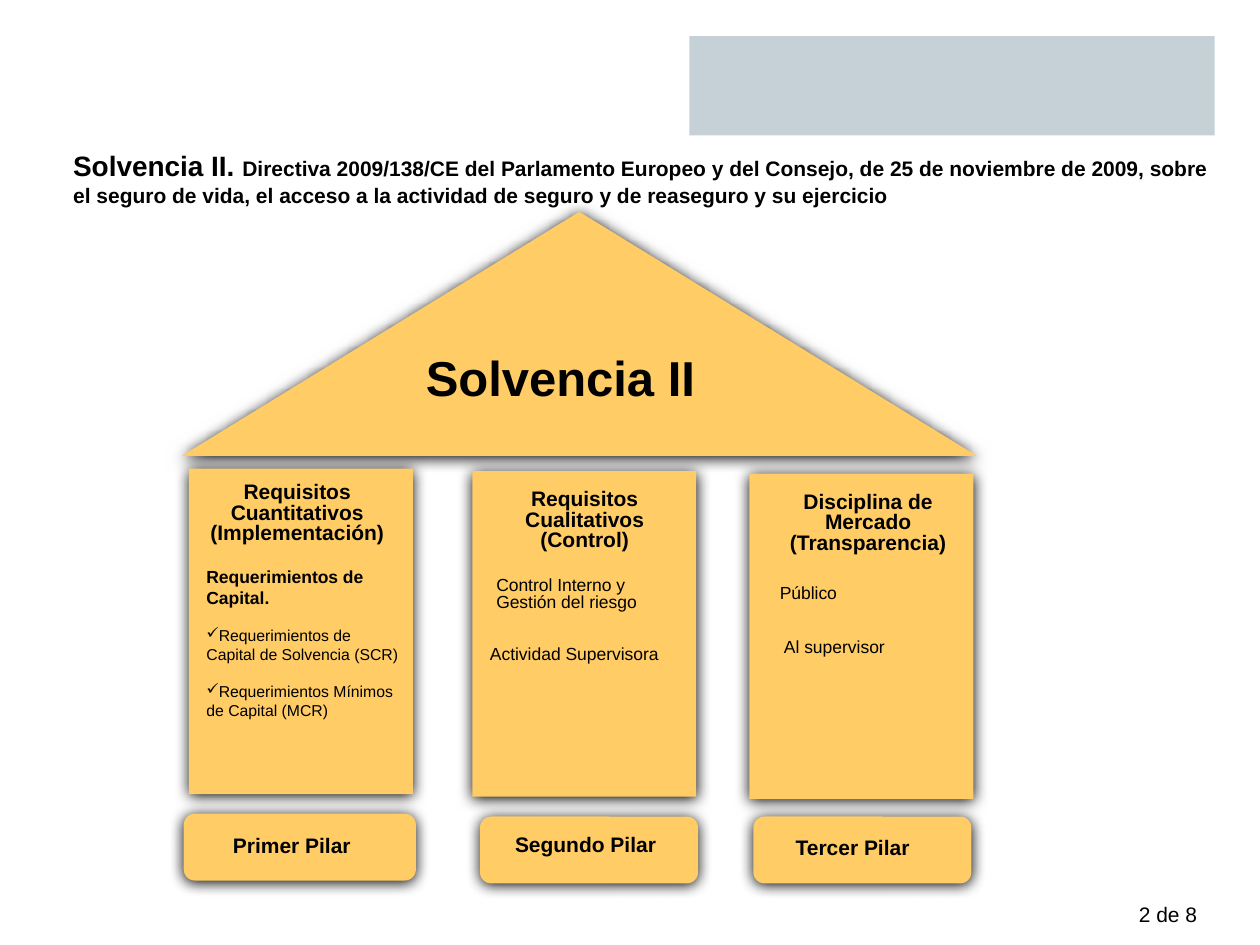
"""Build the slide of the three pillars of Solvencia II, drawn as a temple."""
from dataclasses import dataclass

from lxml import etree
from pptx import Presentation
from pptx.dml.color import RGBColor
from pptx.enum.shapes import MSO_SHAPE
from pptx.enum.text import MSO_ANCHOR, MSO_AUTO_SIZE, PP_ALIGN
from pptx.oxml.ns import qn
from pptx.util import Pt

RECT = MSO_SHAPE.RECTANGLE
ROUNDED = MSO_SHAPE.ROUNDED_RECTANGLE
TRIANGLE = MSO_SHAPE.ISOSCELES_TRIANGLE
LEFT, CENTER = PP_ALIGN.LEFT, PP_ALIGN.CENTER
MIDDLE = MSO_ANCHOR.MIDDLE
NO_FIT = MSO_AUTO_SIZE.NONE

FONT = "Arial"
COLORS = {"text": "000000", "stone": "FFCC66", "banner": "C5D1D7", "shadow": "000000"}
TITLE_ONLY = 5
TIGHT = 0.8
COLUMN_SIZE = (128, 186)
BASE_HEIGHT = 38.2

Box = tuple[float, float, float, float]


@dataclass(frozen=True)
class Label:
    """Text box whose paragraphs share one format."""
    box: Box
    lines: tuple[str, ...]
    size: float = 10
    bold: bool = False
    align: PP_ALIGN = LEFT
    spacing: float = TIGHT


@dataclass(frozen=True)
class Pillar:
    """Column, rounded base and the labels on both."""
    column: tuple[float, float]
    base: tuple[float, float, float]
    labels: tuple[Label, ...]


def heading(box: Box, *lines: str) -> Label:
    """Return the centred heading of a pillar."""
    return Label(box, lines, 12, True, CENTER)


def base_name(left: float, top: float, name: str) -> Label:
    """Return the name on the base of a pillar."""
    return Label((left, top, 101.5, 18.7), (name,), 12, True)


PILLARS = (
    Pillar((108, 267.8), (105, 465, 132.7), (
        heading((108.7, 272.9, 122.4, 42.5), "Requisitos Cuantitativos", "(Implementación)"),
        base_name(126, 475.2, "Primer Pilar"))),
    Pillar((269.9, 269.3), (274.3, 466.6, 124.6), (
        heading((279.4, 276.9, 109.4, 42.5), "Requisitos Cualitativos (Control)"),
        base_name(287.2, 474.5, "Segundo Pilar"),
        Label((276.5, 326.9, 111.6, 26.6), ("Control Interno y Gestión del riesgo",)),
        Label((272.9, 366.2, 123.8, 17.3), ("Actividad Supervisora",)))),
    Pillar((428.2, 270.7), (430.5, 466.6, 124.6), (
        heading((441.4, 278.6, 109.4, 42.5), "Disciplina de Mercado", "(Transparencia)"),
        base_name(447.6, 475.9, "Tercer Pilar"),
        Label((438.5, 331.2, 111.6, 17.3), ("Público",)),
        Label((440.9, 362.2, 106, 17.3), ("Al supervisor",)))),
)
ROOF_LABEL = Label((236.2, 201.6, 180.7, 34.6), ("Solvencia II",), 28, True)
PAGE_LABEL = Label((643.7, 511.9, 71.3, 21.6), ("2 de 8",), 12, spacing=1)
CAPITAL_BOX = (110.9, 319.7, 124.6, 107.3)
CAPITAL_ITEMS = (
    "Requerimientos de Capital de Solvencia (SCR)",
    "Requerimientos Mínimos de Capital (MCR)",
)


def rgb(name: str) -> RGBColor:
    """Return a named colour."""
    return RGBColor.from_string(COLORS[name])


def add_block(s, kind: MSO_SHAPE, box: Box, color: str, shadow: bool = True) -> None:
    """Draw a filled shape, with a soft shadow if wanted."""
    sp = s.shapes.add_shape(kind, *map(Pt, box))
    sp.fill.solid()
    sp.fill.fore_color.rgb = rgb(color)
    sp.line.fill.background()
    sp.shadow.inherit = False
    if shadow:
        effects = sp._element.spPr.find(qn("a:effectLst"))
        outer = etree.SubElement(
            effects, qn("a:outerShdw"), blurRad=str(Pt(8.5)), dist=str(Pt(1)),
            dir="5400000", algn="ctr", rotWithShape="0")
        etree.SubElement(outer, qn("a:srgbClr"), val=COLORS["shadow"])


def add_run(p, text: str, size: float, bold: bool) -> None:
    """Add a formatted run to a paragraph."""
    r = p.add_run()
    r.text = text
    r.font.name = FONT
    r.font.size = Pt(size)
    r.font.bold = bold
    r.font.color.rgb = rgb("text")


def add_box(s, box: Box):
    """Add an empty wrapping text box and return its text frame."""
    tf = s.shapes.add_textbox(*map(Pt, box)).text_frame
    tf.word_wrap = True
    return tf


def add_label(s, label: Label) -> None:
    """Draw a text box from its description."""
    tf = add_box(s, label.box)
    for i, line in enumerate(label.lines):
        p = tf.add_paragraph() if i else tf.paragraphs[0]
        p.alignment = label.align
        p.line_spacing = label.spacing
        add_run(p, line, label.size, label.bold)


def add_capital(s) -> None:
    """Draw the ticked list of capital requirements."""
    tf = add_box(s, CAPITAL_BOX)
    add_run(tf.paragraphs[0], "Requerimientos de Capital.", 10, True)
    for item in CAPITAL_ITEMS:
        p = tf.add_paragraph()
        pPr = p._p.get_or_add_pPr()
        pPr.set("marL", "0")
        pPr.set("indent", "0")
        etree.SubElement(pPr, qn("a:buChar"), char="✓")
        p.space_before = Pt(10.4)
        add_run(p, item, 9, False)


def add_title(s) -> None:
    """Place and fill the title placeholder."""
    sp = s.shapes.title
    sp.left, sp.top, sp.width, sp.height = map(Pt, (34.6, 79.2, 671, 45.4))
    tf = sp.text_frame
    tf.word_wrap = True
    tf.auto_size = NO_FIT
    tf.vertical_anchor = MIDDLE
    p = tf.paragraphs[0]
    p.alignment = LEFT
    add_run(p, "Solvencia II. ", 16, True)
    add_run(p, "Directiva 2009/138/CE del Parlamento Europeo y del Consejo, de 25 de "
               "noviembre de 2009, sobre el seguro de vida, el acceso a la actividad de "
               "seguro y de reaseguro y su ejercicio", 12, True)


def main() -> None:
    """Build and save the presentation."""
    prs = Presentation()
    prs.slide_width, prs.slide_height = Pt(720), Pt(540)
    s = prs.slides.add_slide(prs.slide_layouts[TITLE_ONLY])
    add_block(s, RECT, (394, 20.7, 300.2, 56.7), "banner", shadow=False)
    add_title(s)
    add_block(s, TRIANGLE, (103.9, 121, 454.3, 139.5), "stone")
    add_label(s, ROOF_LABEL)
    for pillar in PILLARS:
        add_block(s, RECT, (*pillar.column, *COLUMN_SIZE), "stone")
        add_block(s, ROUNDED, (*pillar.base, BASE_HEIGHT), "stone")
        for label in pillar.labels:
            add_label(s, label)
    add_capital(s)
    add_label(s, PAGE_LABEL)
    prs.save("out.pptx")


if __name__ == "__main__":
    main()
